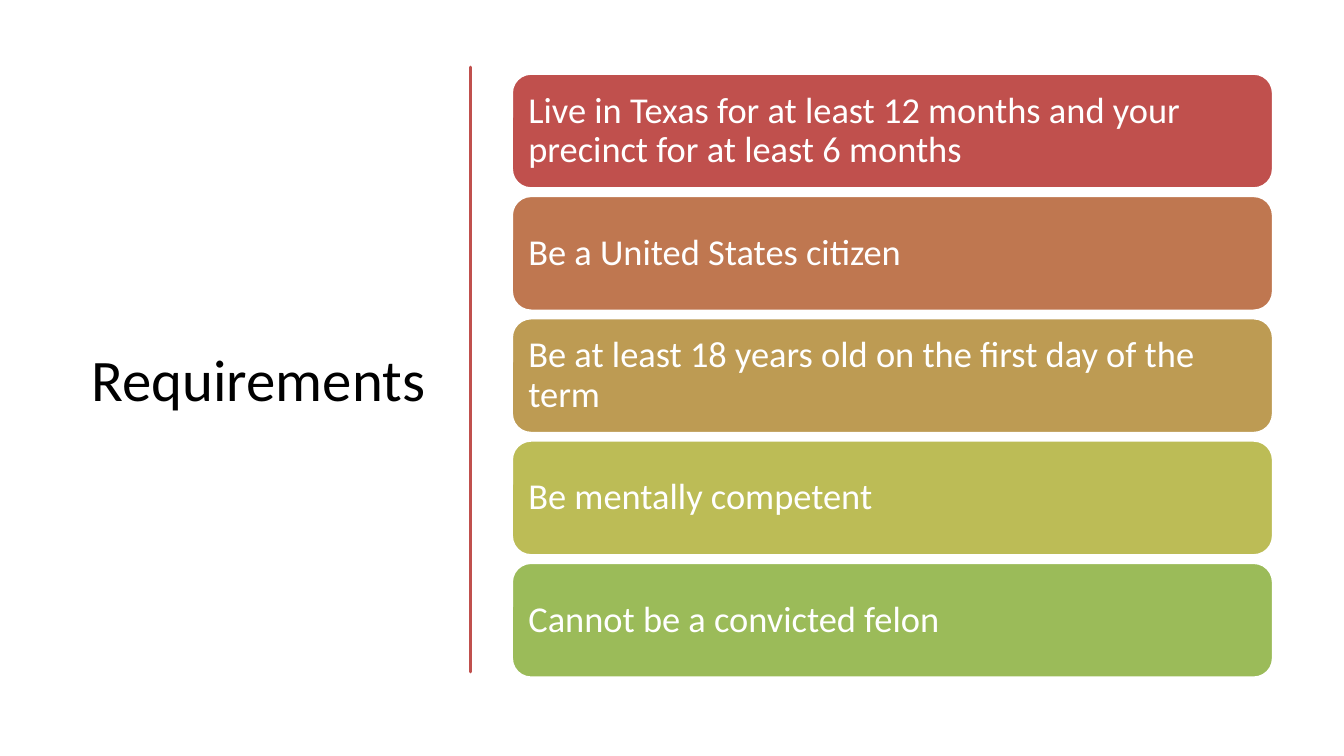
from pptx import Presentation
from pptx.dml.color import RGBColor
from pptx.enum.shapes import MSO_SHAPE
from pptx.enum.text import MSO_ANCHOR, PP_ALIGN
from pptx.util import Inches, Pt

FONT = "Calibri"
ACCENT = "C0504D"
WHITE = "FFFFFF"
REQUIREMENTS = [
    ("Live in Texas for at least 12 months and your precinct for at least 6 months", ACCENT),
    ("Be a United States citizen", "BF7750"),
    ("Be at least 18 years old on the first day of the term", "BD9B53"),
    ("Be mentally competent", "BCBC56"),
    ("Cannot be a convicted felon", "9BBB59"),
]
# Sideways wobble of the brush stroke at even steps, in hundredths of an inch
RIGHT_WOBBLE = [0, 1, 0, 0, 0, 2, 1, 0, 0, 1, 0, 0, 1, -1, 1, 0, 0]
LEFT_WOBBLE = [0, -2, 0, 0, 0, 0, 0, -1, 0, 0, 0, -1, 0, 0, 0, -1, 0]


def rgb(color):
    return RGBColor.from_string(color)


def paint(shape, fill, line, line_width):
    shape.shadow.inherit = False
    shape.fill.solid()
    shape.fill.fore_color.rgb = rgb(fill)
    shape.line.color.rgb = rgb(line)
    shape.line.width = Pt(line_width)


def set_font(paragraph, size, color):
    paragraph.font.name = FONT
    paragraph.font.size = Pt(size)
    paragraph.font.color.rgb = rgb(color)


def place_title(slide, text, left, top, width, height):
    title = slide.shapes.title
    title.left, title.top = Inches(left), Inches(top)
    title.width, title.height = Inches(width), Inches(height)
    title.text_frame.text = text
    title.text_frame.vertical_anchor = MSO_ANCHOR.MIDDLE
    paragraph = title.text_frame.paragraphs[0]
    paragraph.alignment = PP_ALIGN.CENTER
    set_font(paragraph, 63, "000000")


def add_brush_stroke(slide, left, top, width, height):
    """Draw a thin vertical bar whose two edges wobble by hand."""
    step = height / (len(RIGHT_WOBBLE) - 1)

    def edge(x, wobble):
        return [(x + offset / 100, top + row * step) for row, offset in enumerate(wobble)]

    outline = edge(left + width, RIGHT_WOBBLE) + edge(left, LEFT_WOBBLE)[::-1]
    builder = slide.shapes.build_freeform(*outline[0], scale=Inches(1))
    builder.add_line_segments(outline[1:], close=True)
    paint(builder.convert_to_shape(), ACCENT, ACCENT, 3.25)


def add_requirement_list(slide, requirements, left, top, width, height, gap):
    count = len(requirements)
    bar_height = (height - gap * (count - 1)) / count
    for row, (text, color) in enumerate(requirements):
        bar = slide.shapes.add_shape(
            MSO_SHAPE.ROUNDED_RECTANGLE,
            Inches(left), Inches(top + row * (bar_height + gap)),
            Inches(width), Inches(bar_height),
        )
        paint(bar, color, WHITE, 2)
        frame = bar.text_frame
        frame.word_wrap = True
        frame.vertical_anchor = MSO_ANCHOR.MIDDLE
        frame.margin_left = frame.margin_right = Inches(0.16)
        frame.margin_top = frame.margin_bottom = Inches(0.16)
        frame.text = text
        paragraph = frame.paragraphs[0]
        paragraph.alignment = PP_ALIGN.LEFT
        paragraph.line_spacing = 0.9
        set_font(paragraph, 39, WHITE)


def main():
    presentation = Presentation()
    presentation.slide_width = Inches(20)
    presentation.slide_height = Inches(11.25)
    title_only = presentation.slide_layouts.get_by_name("Title Only")
    slide = presentation.slides.add_slide(title_only)

    place_title(slide, "Requirements", left=1.04, top=1.05, width=5.61, height=9.16)
    add_brush_stroke(slide, left=7.09, top=1.26, width=0.03, height=8.87)
    add_requirement_list(slide, REQUIREMENTS, left=7.62, top=1.1, width=11.32, height=8.98, gap=0.12)

    presentation.save("out.pptx")


if __name__ == "__main__":
    main()
